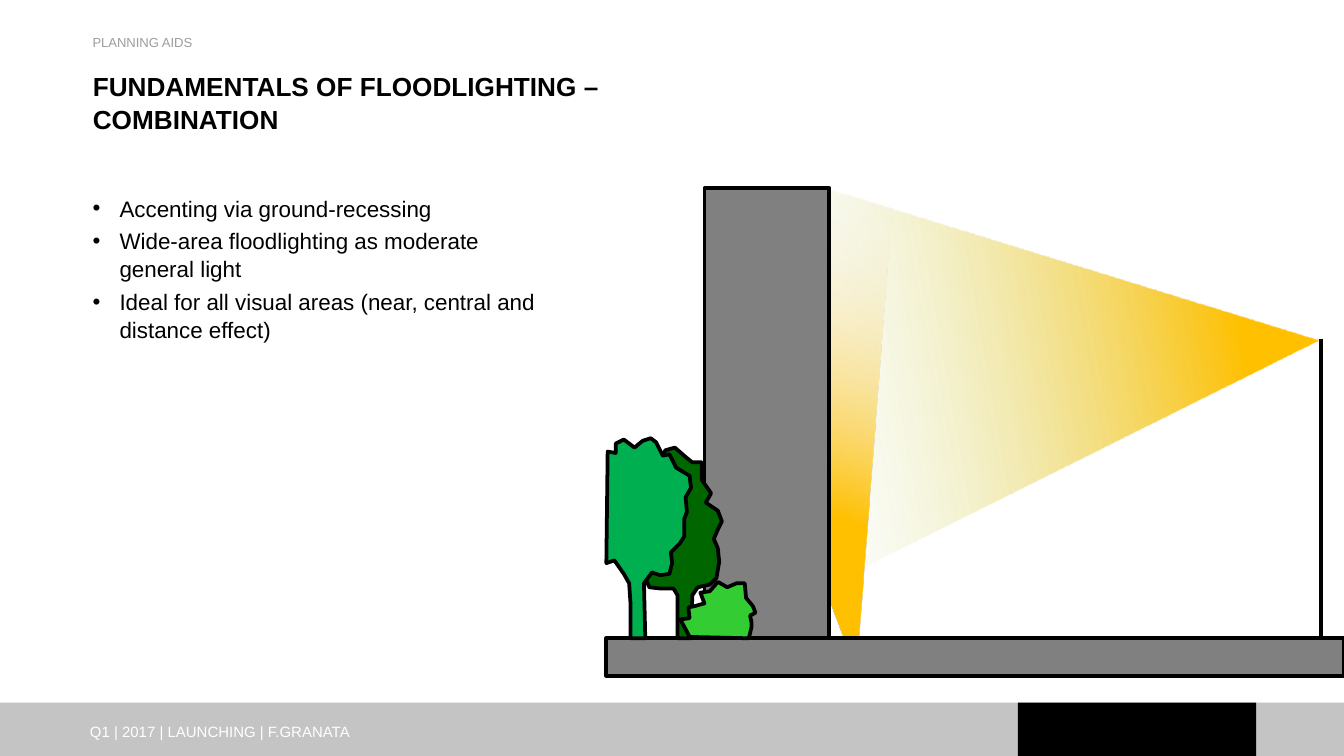
from dataclasses import dataclass
from typing import NamedTuple

from lxml.etree import SubElement
from pptx import Presentation
from pptx.dml.color import RGBColor
from pptx.enum.shapes import MSO_CONNECTOR as Connector, MSO_SHAPE as Preset
from pptx.enum.text import MSO_ANCHOR as Anchor, MSO_AUTO_SIZE as AutoSize, PP_ALIGN as Align
from pptx.oxml.ns import qn
from pptx.util import Cm, Pt


@dataclass(frozen=True)
class Theme:
    """Colours, type sizes and line weight of the slide."""
    font: str = "Arial"
    text: str = "000000"
    muted: str = "9C9D9D"
    footer: str = "C4C4C4"
    footer_text: str = "FFFFFF"
    outline: str = "000000"
    masonry: str = "808080"
    dark_tree: str = "006600"
    light_tree: str = "00B050"
    bush: str = "33CC33"
    light: str = "FFC000"
    wide_fade: str = "CFE3A7"
    narrow_fade: str = "F2F2F2"
    title_size: float = 14
    body_size: float = 12
    footer_size: float = 8
    kicker_size: float = 7
    line_width: float = 2


class Box(NamedTuple):
    """A rectangle on the slide."""
    left: int
    top: int
    width: int
    height: int


THEME = Theme()
GRID_COLUMNS = 549
GROUND_LEVEL = 335
BULLETS = [
    "Accenting via ground-recessing",
    "Wide-area floodlighting as moderate general light",
    "Ideal for all visual areas (near, central and distance effect)",
]
WIDE_BEAM = [(530, 113), (166, 1), (166, 294)]
NARROW_BEAM = [(176, 333), (188, 333), (213, 6), (166, 6), (165, 304)]
DARK_TREE = [
    (63, 335), (64, 303), (68, 297), (77, 295), (82, 290), (84, 278), (83, 268), (80, 261),
    (83, 254), (86, 248), (83, 240), (74, 234), (78, 227), (71, 217), (71, 204), (64, 204),
    (59, 200), (51, 193), (44, 195), (38, 206), (25, 212), (21, 229), (23, 245), (16, 252),
    (23, 277), (32, 297), (41, 298), (50, 298), (53, 303), (53, 335),
]
BUSH = [
    (106, 335), (108, 327), (108, 323), (107, 318), (111, 316), (109, 311), (104, 305),
    (103, 294), (97, 294), (90, 297), (83, 293), (77, 300), (70, 301), (73, 309), (66, 311),
    (61, 312), (62, 320), (55, 321), (60, 330), (62, 334),
]
LIGHT_TREE = [
    (18, 335), (29, 335), (28, 294), (34, 286), (40, 288), (47, 287), (49, 279), (48, 271),
    (55, 264), (58, 259), (58, 246), (60, 241), (59, 230), (63, 223), (62, 214), (52, 208),
    (47, 198), (42, 199), (37, 189), (33, 186), (27, 188), (21, 193), (13, 187), (7, 190),
    (7, 197), (1, 196), (0, 279), (6, 277), (13, 287), (17, 294), (18, 309),
]


def paint(shape, color, outlined=False):
    """Give a shape a solid fill and, if wanted, the scene outline."""
    shape.shadow.inherit = False
    shape.fill.solid()
    shape.fill.fore_color.rgb = RGBColor.from_string(color)
    if outlined:
        shape.line.color.rgb = RGBColor.from_string(THEME.outline)
        shape.line.width = Pt(THEME.line_width)
    else:
        shape.line.fill.background()


def paint_beam(shape, fade, start, angle):
    """Fill a beam with a gradient that fades to full transparency."""
    shape.shadow.inherit = False
    shape.line.fill.background()
    shape.fill.gradient()
    shape.fill.gradient_angle = 360 - angle
    stops = shape.fill.gradient_stops
    for stop, color, position in zip(stops, (THEME.light, fade), (start, 1)):
        stop.color.rgb = RGBColor.from_string(color)
        stop.position = position
    faded_color = shape._element.spPr.findall(".//" + qn("a:srgbClr"))[-1]
    SubElement(faded_color, qn("a:alpha"), val="0")


def format_text(text_frame, size, color, bold=False, line_spacing=1.0):
    """Wrap and top-align a text frame and style all its runs."""
    text_frame.word_wrap = True
    text_frame.auto_size = AutoSize.NONE
    text_frame.vertical_anchor = Anchor.TOP
    for paragraph in text_frame.paragraphs:
        paragraph.alignment = Align.LEFT
        paragraph.line_spacing = line_spacing
        for run in paragraph.runs:
            run.font.name = THEME.font
            run.font.size = Pt(size)
            run.font.bold = bold
            run.font.color.rgb = RGBColor.from_string(color)


def add_label(slide, box, text, size, color):
    """Place a one-line label."""
    text_frame = slide.shapes.add_textbox(*box).text_frame
    text_frame.text = text
    format_text(text_frame, size, color)


def add_title(slide, box):
    """Place and format the title placeholder."""
    title = slide.shapes.title
    title.left, title.top, title.width, title.height = box
    title.text_frame.text = "FUNDAMENTALS OF FLOODLIGHTING –\vCOMBINATION"
    format_text(title.text_frame, THEME.title_size, THEME.text, bold=True, line_spacing=1.05)


def add_bullets(slide, box):
    """Place the bulleted list."""
    text_frame = slide.shapes.add_textbox(*box).text_frame
    text_frame.text = "\n".join(BULLETS)
    for index, paragraph in enumerate(text_frame.paragraphs):
        properties = paragraph._p.get_or_add_pPr()
        properties.set("marL", str(Cm(0.51)))
        properties.set("indent", str(-Cm(0.51)))
        SubElement(properties, qn("a:buFont"), typeface=THEME.font)
        SubElement(properties, qn("a:buChar"), char="•")
        paragraph.space_before = Pt(2.4 if index else 0)
    format_text(text_frame, THEME.body_size, THEME.text, line_spacing=1.05)


def add_footer(slide, box):
    """Place the footer bar with its dark block and label."""
    bar = slide.shapes.add_shape(Preset.RECTANGLE, *box)
    paint(bar, THEME.footer)
    block = slide.shapes.add_shape(
        Preset.RECTANGLE, box.left + Cm(19.24), box.top, Cm(4.5), box.height)
    paint(block, THEME.outline)
    label_box = Box(box.left + Cm(1.45), box.top + Cm(0.26), Cm(7.24), Cm(0.5))
    add_label(slide, label_box, "Q1 | 2017 | LAUNCHING | F.GRANATA",
              THEME.footer_size, THEME.footer_text)


def add_scene(slide, box):
    """Draw the floodlit tower, plants, ground and lamp post on a grid in the box."""
    unit = box.width / GRID_COLUMNS

    def locate(column, row):
        """Turn a grid point into a slide position."""
        return round(box.left + column * unit), round(box.top + row * unit)

    def add_outline(points):
        """Draw a closed outline through grid points."""
        builder = slide.shapes.build_freeform(*points[0], scale=unit)
        builder.add_line_segments(points[1:], close=True)
        return builder.convert_to_shape(box.left, box.top)

    def add_block(column, row, columns, rows):
        """Draw a masonry rectangle."""
        block = slide.shapes.add_shape(
            Preset.RECTANGLE, *locate(column, row), round(columns * unit), round(rows * unit))
        paint(block, THEME.masonry, outlined=True)

    paint_beam(add_outline(WIDE_BEAM), THEME.wide_fade, 0.18, 170)
    paint_beam(add_outline(NARROW_BEAM), THEME.narrow_fade, 0.26, 290)
    add_block(0, GROUND_LEVEL, GRID_COLUMNS, 28)
    add_block(73, 0, 93, GROUND_LEVEL)
    plants = ((DARK_TREE, THEME.dark_tree), (BUSH, THEME.bush), (LIGHT_TREE, THEME.light_tree))
    for points, color in plants:
        paint(add_outline(points), color, outlined=True)
    post = slide.shapes.add_connector(
        Connector.STRAIGHT, *locate(532, 112), *locate(532, GROUND_LEVEL - 1))
    post.line.color.rgb = RGBColor.from_string(THEME.outline)
    post.line.width = Pt(THEME.line_width)
    SubElement(post._element.spPr, qn("a:effectLst"))


def main():
    """Build and save the slide."""
    presentation = Presentation()
    presentation.slide_width, presentation.slide_height = Cm(25.4), Cm(14.29)
    slide = presentation.slides.add_slide(presentation.slide_layouts[5])
    add_footer(slide, Box(0, Cm(13.28), Cm(25.4), Cm(1.01)))
    add_label(slide, Box(Cm(1.5), Cm(0.53), Cm(22.2), Cm(0.61)), "PLANNING AIDS",
              THEME.kicker_size, THEME.muted)
    add_title(slide, Box(Cm(1.5), Cm(1.17), Cm(22.2), Cm(2.39)))
    add_bullets(slide, Box(Cm(1.5), Cm(3.53), Cm(9.14), Cm(3.63)))
    add_scene(slide, Box(Cm(11.46), Cm(3.56), Cm(13.94), Cm(9.22)))
    presentation.save("out.pptx")


if __name__ == "__main__":
    main()
